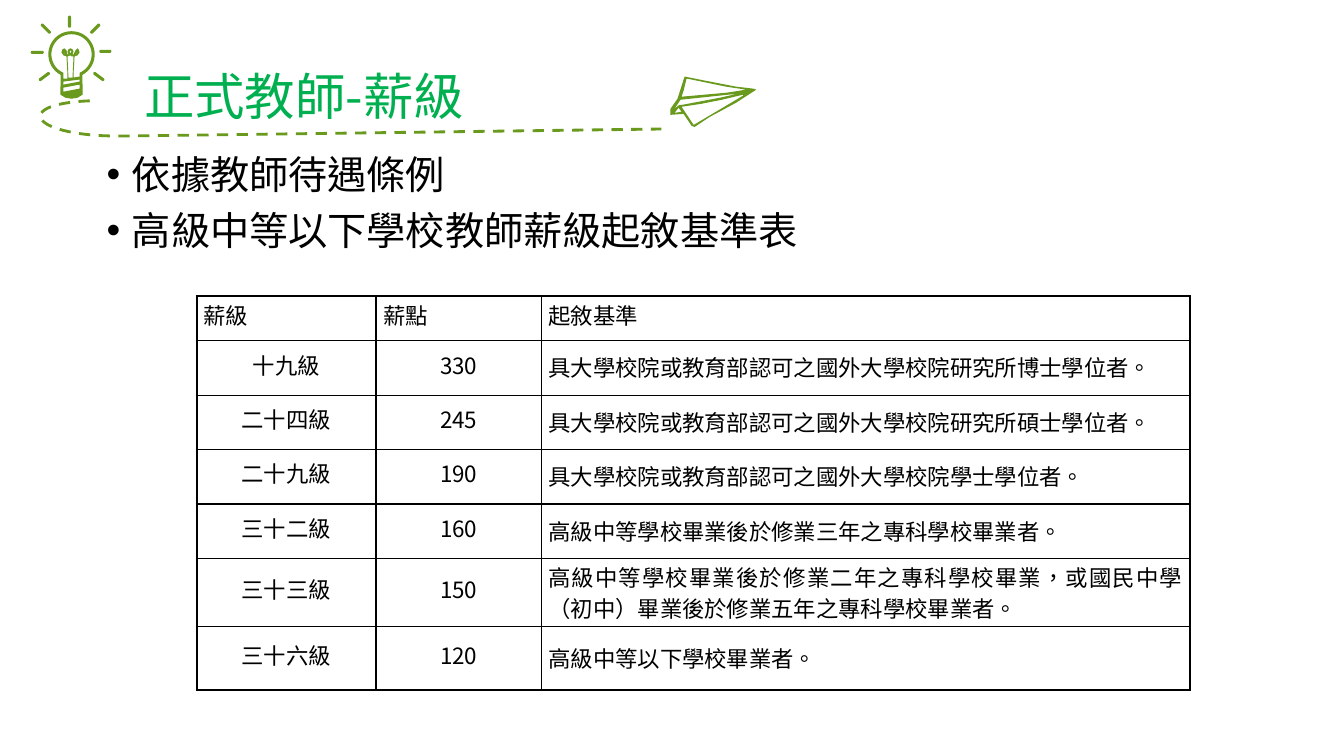
import math
from dataclasses import dataclass

import lxml.etree
import pptx
import pptx.dml.color
import pptx.enum.dml
import pptx.enum.text
import pptx.oxml.ns
import pptx.util

Inches = pptx.util.Inches
Pt = pptx.util.Pt
ALIGN = pptx.enum.text.PP_ALIGN
MIDDLE = pptx.enum.text.MSO_ANCHOR.MIDDLE
qn = pptx.oxml.ns.qn
Point = tuple[float, float]

GREEN, TITLE_GREEN, BLACK = "69991D", "00B050", "000000"
TITLE_FONT, SANS, SERIF = "Noto Sans CJK JP", "Noto Sans CJK SC", "Times New Roman"


@dataclass
class Ray:
    start: Point
    end: Point


@dataclass
class Column:
    width: float
    alignment: int
    line_points: int
    font: str


@dataclass
class SalaryRow:
    height: float
    texts: tuple[str, str, str]


BULB_CENTER = (0.71, 0.54)
FILAMENT = [
    (0.63, 0.78), (0.67, 0.78), (0.67, 0.74), (0.66, 0.56), (0.63, 0.55), (0.61, 0.52),
    (0.62, 0.49), (0.64, 0.48), (0.66, 0.5), (0.67, 0.54), (0.68, 0.54), (0.67, 0.51),
    (0.68, 0.49), (0.7, 0.48), (0.72, 0.49), (0.73, 0.51), (0.72, 0.54), (0.73, 0.54),
    (0.75, 0.5), (0.77, 0.48), (0.78, 0.49), (0.79, 0.52), (0.77, 0.55), (0.74, 0.56),
    (0.73, 0.74), (0.73, 0.77), (0.79, 0.76),
]
BULB_DETAILS = [
    [(0.63, 0.91), (0.79, 0.88), (0.79, 0.84), (0.63, 0.87)],
    [(0.63, 0.84), (0.79, 0.81), (0.79, 0.79), (0.63, 0.81)],
    [(0.71, 0.56), (0.7, 0.55), (0.67, 0.56), (0.68, 0.77), (0.72, 0.77), (0.73, 0.56)],
    [(0.71, 0.51), (0.7, 0.5), (0.69, 0.51), (0.7, 0.53)],
    [(0.65, 0.54), (0.64, 0.52), (0.63, 0.51), (0.64, 0.53)],
    [(0.75, 0.54), (0.76, 0.53), (0.77, 0.51), (0.76, 0.52)],
]
RAYS = [
    Ray((1, 0.51), (1.09, 0.51)), Ray((0.69, 0.17), (0.69, 0.26)),
    Ray((0.32, 0.52), (0.42, 0.52)), Ray((0.4, 0.79), (0.48, 0.73)),
    Ray((0.94, 0.73), (1.02, 0.79)), Ray((0.42, 0.25), (0.49, 0.32)),
    Ray((0.91, 0.32), (0.98, 0.25)),
]
PLANE = [
    [(7.5, 0.89), (7.44, 0.93), (7.3, 1.02), (7.04, 1.16), (6.89, 1.26), (6.86, 1.25),
     (6.78, 1.13), (6.65, 1.14), (6.65, 1.08), (6.72, 0.98), (6.79, 0.76), (6.99, 0.8),
     (7.3, 0.86), (7.47, 0.88)],
    [(6.81, 0.78), (6.78, 0.9), (6.76, 0.96), (7.21, 0.92), (7.4, 0.89), (7.2, 0.86)],
    [(6.76, 1.06), (6.88, 1.24), (7.37, 0.95), (7.37, 0.94), (7.16, 0.99), (6.96, 1.03)],
    [(6.75, 0.99), (6.69, 1.08), (6.74, 1.04), (6.77, 1.04), (7.14, 0.97), (7.32, 0.93)],
    [(6.69, 1.12), (6.76, 1.11), (6.73, 1.07)],
]
COLUMNS = [
    Column(1.78, ALIGN.CENTER, 18, SERIF),
    Column(1.64, ALIGN.CENTER, 18, SANS),
    Column(6.43, ALIGN.JUSTIFY, 22, SERIF),
]
SALARY_ROWS = [
    SalaryRow(0.44, ("薪級", "薪點", "起敘基準")),
    SalaryRow(0.54, ("十九級", "330", "具大學校院或教育部認可之國外大學校院研究所博士學位者。")),
    SalaryRow(0.54, ("二十四級", "245", "具大學校院或教育部認可之國外大學校院研究所碩士學位者。")),
    SalaryRow(0.54, ("二十九級", "190", "具大學校院或教育部認可之國外大學校院學士學位者。")),
    SalaryRow(0.54, ("三十二級", "160", "高級中等學校畢業後於修業三年之專科學校畢業者。")),
    SalaryRow(0.68, ("三十三級", "150", "高級中等學校畢業後於修業二年之專科學校畢業，"
                     "或國民中學（初中）畢業後於修業五年之專科學校畢業者。")),
    SalaryRow(0.63, ("三十六級", "120", "高級中等以下學校畢業者。")),
]


def color(value: str) -> pptx.dml.color.RGBColor:
    return pptx.dml.color.RGBColor.from_string(value)


def arc(center: Point, radius: float, first: float, last: float, steps: int) -> list[Point]:
    angles = [math.radians(first + (last - first) * step / steps) for step in range(steps + 1)]
    return [(center[0] + radius * math.cos(a), center[1] + radius * math.sin(a)) for a in angles]


def bezier(a: Point, b: Point, c: Point, d: Point, steps: int = 30) -> list[Point]:
    def blend(axis: int, t: float) -> float:
        u = 1 - t
        return (u**3 * a[axis] + 3 * u * u * t * b[axis]
                + 3 * u * t * t * c[axis] + t**3 * d[axis])
    return [(blend(0, i / steps), blend(1, i / steps)) for i in range(steps + 1)]


def add_outline(shapes, contours: list[list[Point]], closed: bool = True):
    scaled = [[(Inches(x), Inches(y)) for x, y in contour] for contour in contours]
    builder = shapes.build_freeform(*scaled[0][0], scale=1.0)
    for index, contour in enumerate(scaled):
        if index:
            builder.move_to(*contour[0])
        builder.add_line_segments(contour[1:], close=closed)
    shape = builder.convert_to_shape()
    shape.shadow.inherit = False
    if closed:
        shape.fill.solid()
        shape.fill.fore_color.rgb = color(GREEN)
        shape.line.fill.background()
    else:
        shape.fill.background()
        shape.line.color.rgb = color(GREEN)
        shape.line.width = Pt(2)
        shape.line.dash_style = pptx.enum.dml.MSO_LINE.DASH
    return shape


def add_ray(shapes, ray: Ray) -> None:
    (x1, y1), (x2, y2) = ray.start, ray.end
    angle = math.degrees(math.atan2(y2 - y1, x2 - x1))
    radius = 0.03 / 2
    add_outline(shapes, [arc(ray.end, radius, angle - 90, angle + 90, 8)
                         + arc(ray.start, radius, angle + 90, angle + 270, 8)])


def add_run(paragraph, text: str, size: float, font: str, ink: str, asian_font: str) -> None:
    run = paragraph.add_run()
    run.text = text
    run.font.size = Pt(size)
    run.font.name = font
    run.font.color.rgb = color(ink)
    properties = run.font._element
    properties.set("lang", "zh-TW")
    lxml.etree.SubElement(properties, qn("a:ea")).set("typeface", asian_font)


def set_border(cell, side: str, points: float) -> None:
    properties = cell._tc.get_or_add_tcPr()
    line = lxml.etree.SubElement(properties, qn(f"a:ln{side}"), w=str(Pt(points)))
    fill = lxml.etree.SubElement(line, qn("a:solidFill"))
    lxml.etree.SubElement(fill, qn("a:srgbClr"), val=BLACK)


def add_art(shapes) -> None:
    bulb = shapes.add_group_shape().shapes
    glass = arc(BULB_CENTER, 0.23, 118, 422, 40)
    base = [(0.82, 0.94), (0.77, 0.97), (0.71, 0.98), (0.65, 0.97), (0.6, 0.94)]
    inside = FILAMENT + arc(BULB_CENTER, 0.2, 66, -246, 40)
    add_outline(bulb, [glass + base, inside, *BULB_DETAILS])
    for ray in RAYS:
        add_ray(bulb, ray)
    trail = bezier((0.89, 1), (0.12, 1.03), (0.29, 1.35), (1.18, 1.35))
    add_outline(shapes, [trail + [(6.56, 1.28)]], closed=False)
    add_outline(shapes, PLANE)


def add_title(slide) -> None:
    title = slide.shapes.title
    title.left, title.top, title.width, title.height = map(Inches, (1.33, 0.55, 4.21, 0.86))
    title.text_frame.vertical_anchor = MIDDLE
    title.text_frame.auto_size = pptx.enum.text.MSO_AUTO_SIZE.NONE
    paragraph = title.text_frame.paragraphs[0]
    paragraph.alignment = ALIGN.LEFT
    paragraph.line_spacing = 0.9
    add_run(paragraph, "正式教師-薪級", 36, TITLE_FONT, TITLE_GREEN, TITLE_FONT)


def add_bullets(shapes, lines: list[str]) -> None:
    frame = shapes.add_textbox(*map(Inches, (0.96, 1.49, 9.99, 1.2))).text_frame
    frame.word_wrap = True
    for index, line in enumerate(lines):
        paragraph = frame.add_paragraph() if index else frame.paragraphs[0]
        paragraph.line_spacing = 0.9
        paragraph.space_before = Pt(10 if index else 0)
        properties = paragraph._p.get_or_add_pPr()
        properties.set("marL", str(Inches(0.25)))
        properties.set("indent", str(Inches(-0.25)))
        lxml.etree.SubElement(properties, qn("a:buFont"), typeface="Arial")
        lxml.etree.SubElement(properties, qn("a:buChar"), char="•")
        add_run(paragraph, line, 28, SANS, BLACK, SANS)


def add_salary_table(shapes) -> None:
    last_row, last_column = len(SALARY_ROWS) - 1, len(COLUMNS) - 1
    table = shapes.add_table(last_row + 1, last_column + 1,
                             *map(Inches, (1.95, 2.94, 9.84, 3.88))).table
    table.first_row = table.horz_banding = False
    for index, column in enumerate(COLUMNS):
        table.columns[index].width = Inches(column.width)
    for r, row in enumerate(SALARY_ROWS):
        table.rows[r].height = Inches(row.height)
        for c, column in enumerate(COLUMNS):
            cell = table.cell(r, c)
            cell.vertical_anchor = MIDDLE
            cell.margin_left = cell.margin_right = Inches(0.07)
            cell.margin_top = cell.margin_bottom = 0
            outer = {"L": c == 0, "R": c == last_column, "T": r == 0, "B": r == last_row}
            for side, is_outer in outer.items():
                set_border(cell, side, 1.5 if is_outer else 1)
            cell.fill.background()
            paragraph = cell.text_frame.paragraphs[0]
            paragraph.alignment = column.alignment if r else ALIGN.JUSTIFY
            paragraph.line_spacing = Pt(column.line_points if r else 18)
            paragraph.space_after = Pt(0 if r else 6)
            add_run(paragraph, row.texts[c], 16, column.font if r else SERIF, BLACK, SANS)


def main() -> None:
    presentation = pptx.Presentation()
    presentation.slide_width, presentation.slide_height = Inches(13.33), Inches(7.5)
    slide = presentation.slides.add_slide(presentation.slide_layouts[5])
    add_art(slide.shapes)
    add_title(slide)
    add_bullets(slide.shapes, ["依據教師待遇條例", "高級中等以下學校教師薪級起敘基準表"])
    add_salary_table(slide.shapes)
    presentation.save("out.pptx")


if __name__ == "__main__":
    main()
